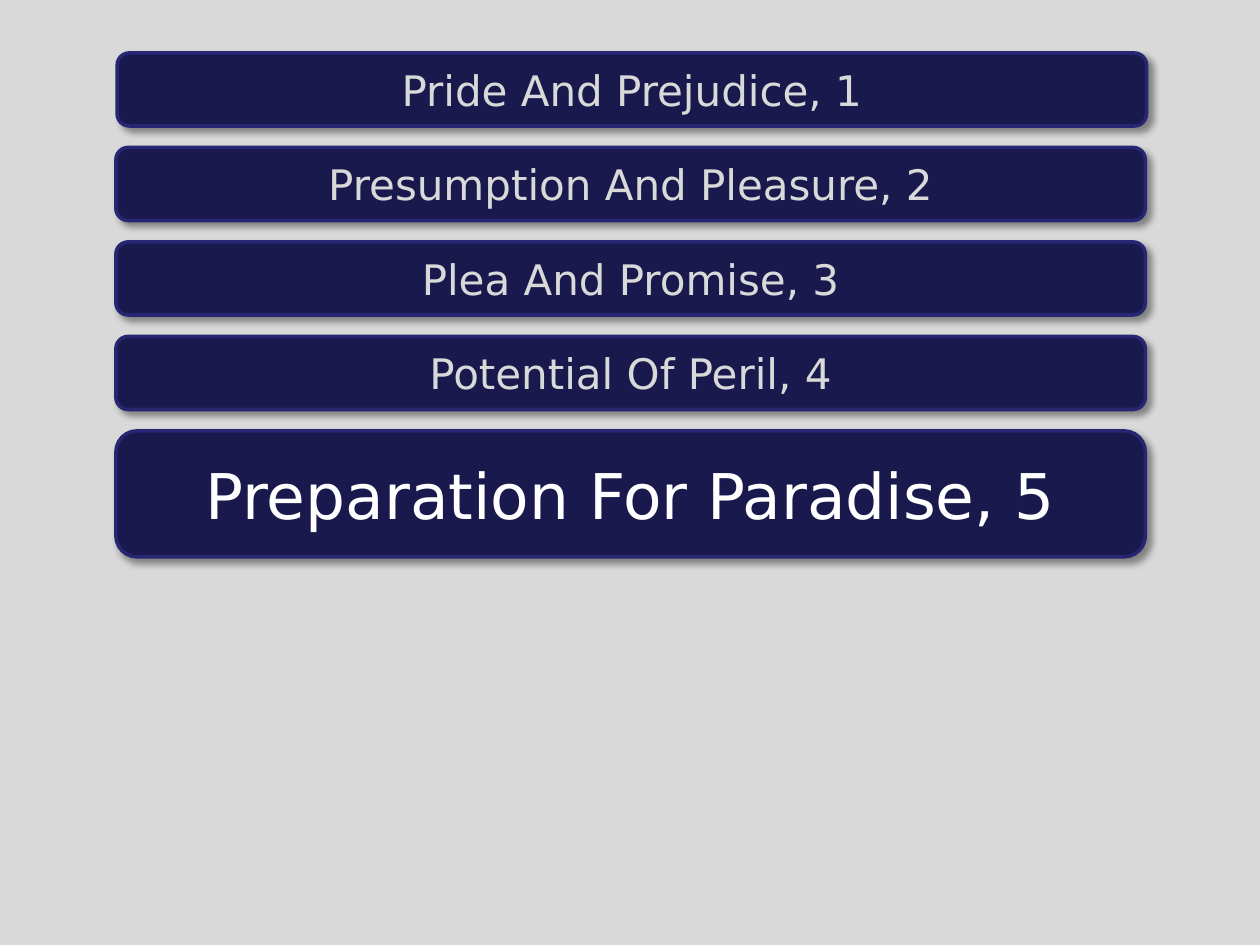
from dataclasses import dataclass

from lxml.etree import SubElement
from pptx import Presentation
from pptx.dml.color import RGBColor
from pptx.enum.shapes import MSO_SHAPE
from pptx.enum.text import MSO_ANCHOR, PP_ALIGN
from pptx.oxml.ns import qn
from pptx.util import Inches, Pt


@dataclass(frozen=True)
class Theme:
    background: str = "D9D9D9"
    fill: str = "19194D"
    line: str = "262673"
    muted: str = "D9D9D9"
    bright: str = "FFFFFF"
    shadow: str = "000000"
    font: str = "DejaVu Sans"
    normal: int = 24
    large: int = 36
    line_width: int = 2


class Deck:
    """Holds the theme, the row grid and the current slide."""
    TOP, ROW = 0.42, 0.75      # inches: first row and row pitch
    LEFT, WIDTH = 0.92, 8.17   # inches: the single column

    def __init__(self, prs, theme):
        self.theme = theme
        self.s = prs.slides.add_slide(prs.slide_layouts[6])
        bg = self.s.background.fill
        bg.solid()
        bg.fore_color.rgb = RGBColor.from_string(theme.background)

    def shadow(self, sp):
        """Soft shadow to the lower right: 4 pt blur, 3 pt away, 40 % opaque."""
        sp.shadow.inherit = False
        effects = sp._element.spPr.find(qn("a:effectLst"))
        outer = SubElement(effects, qn("a:outerShdw"), blurRad=str(Pt(4)),
                           dist=str(Pt(3)), dir=str(45 * 60000),
                           algn="tl", rotWithShape="0")
        color = SubElement(outer, qn("a:srgbClr"), val=self.theme.shadow)
        SubElement(color, qn("a:alpha"), val="40000")

    def bar(self, row, text, height=0.58, size=None, color=None, nudge=0):
        """Rounded title bar on a grid row."""
        t = self.theme
        box = (self.LEFT + nudge, self.TOP + row * self.ROW, self.WIDTH, height)
        sp = self.s.shapes.add_shape(MSO_SHAPE.ROUNDED_RECTANGLE, *map(Inches, box))
        sp.fill.solid()
        sp.fill.fore_color.rgb = RGBColor.from_string(t.fill)
        sp.line.color.rgb = RGBColor.from_string(t.line)
        sp.line.width = Pt(t.line_width)
        self.shadow(sp)

        tf = sp.text_frame
        tf.vertical_anchor = MSO_ANCHOR.MIDDLE
        p = tf.paragraphs[0]
        p.alignment = PP_ALIGN.CENTER
        r = p.add_run()
        r.text = text
        formats = {"name": t.font, "size": Pt(size or t.normal)}
        for name, value in formats.items():
            setattr(r.font, name, value)
        r.font.color.rgb = RGBColor.from_string(color or t.muted)


def main():
    prs = Presentation()
    prs.slide_width, prs.slide_height = Inches(10), Inches(7.5)
    theme = Theme()
    deck = Deck(prs, theme)

    # Earlier titles; the first sits slightly to the right
    titles = ["Pride And Prejudice, 1", "Presumption And Pleasure, 2",
              "Plea And Promise, 3", "Potential Of Peril, 4"]
    for row, title in enumerate(titles):
        deck.bar(row, title, nudge=0 if row else 0.01)

    # Current title, emphasised
    deck.bar(len(titles), "Preparation For Paradise, 5", height=1,
             size=theme.large, color=theme.bright)

    prs.save("out.pptx")


if __name__ == "__main__":
    main()
